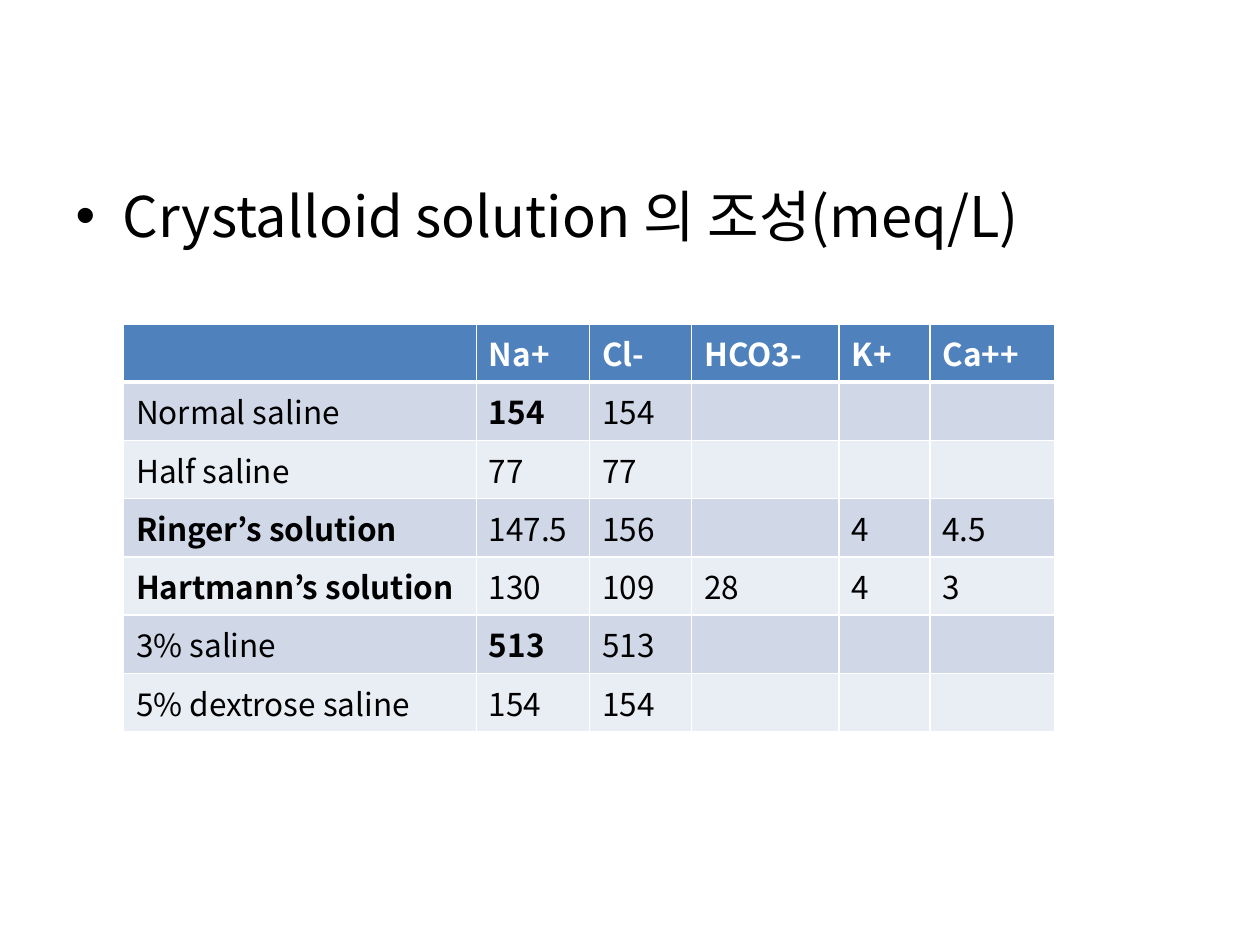
from lxml.etree import SubElement
from pptx import Presentation
from pptx.dml.color import RGBColor
from pptx.oxml.ns import qn
from pptx.util import Inches, Pt

FONT = "Noto Sans CJK KR"
HEADER_FILL, BAND_FILLS = "4F81BD", ("E9EDF4", "D0D8E8")
COLUMN_WIDTHS = [2.8, 0.9, 0.81, 1.17, 0.72, 0.99]
ROW_HEIGHT = 0.46
ROWS = [
    ["", "Na+", "Cl-", "HCO3-", "K+", "Ca++"],
    ["Normal saline", "154", "154", "", "", ""],
    ["Half saline", "77", "77", "", "", ""],
    ["Ringer’s solution", "147.5", "156", "", "4", "4.5"],
    ["Hartmann’s solution", "130", "109", "28", "4", "3"],
    ["3% saline", "513", "513", "", "", ""],
    ["5% dextrose saline", "154", "154", "", "", ""],
]
BOLD_CELLS = {(1, 1), (3, 0), (4, 0), (5, 1)}


def rgb(color):
    return RGBColor.from_string(color)


def write_text(paragraph, text, color, **formats):
    run = paragraph.add_run()
    run.text = text
    for name, value in {"name": FONT, **formats}.items():
        setattr(run.font, name, value)
    run.font.color.rgb = rgb(color)
    SubElement(run.font._element, qn("a:ea"), typeface=FONT)


presentation = Presentation()
presentation.slide_width, presentation.slide_height = Inches(10), Inches(7.5)
slide = presentation.slides.add_slide(presentation.slide_layouts[1])
title = slide.shapes.title
title._element.getparent().remove(title._element)

body = slide.placeholders[1]
for name, value in {"left": 0.5, "top": 1.39, "width": 9, "height": 5.31}.items():
    setattr(body, name, Inches(value))
write_text(body.text_frame.paragraphs[0], "Crystalloid solution 의 조성(meq/L)", "000000", size=Pt(32))

table = slide.shapes.add_table(
    len(ROWS), len(COLUMN_WIDTHS), Inches(0.98), Inches(2.57),
    Inches(sum(COLUMN_WIDTHS)), Inches(ROW_HEIGHT * len(ROWS)),
).table
for column, width in zip(table.columns, COLUMN_WIDTHS):
    column.width = Inches(width)

for row_index, values in enumerate(ROWS):
    is_header = row_index == 0
    table.rows[row_index].height = Inches(ROW_HEIGHT)
    border_widths = {"lnL": 1, "lnR": 1, "lnT": 3 if row_index == 1 else 1, "lnB": 3 if is_header else 1}
    for column_index, value in enumerate(values):
        cell = table.cell(row_index, column_index)
        properties = cell._tc.get_or_add_tcPr()
        for side, width in border_widths.items():
            line = SubElement(properties, qn(f"a:{side}"), w=str(Pt(width)))
            SubElement(SubElement(line, qn("a:solidFill")), qn("a:srgbClr"), val="FFFFFF")
        cell.fill.solid()
        cell.fill.fore_color.rgb = rgb(HEADER_FILL if is_header else BAND_FILLS[row_index % 2])
        if value:
            write_text(
                cell.text_frame.paragraphs[0], value, "FFFFFF" if is_header else "000000",
                size=Pt(18), bold=is_header or (row_index, column_index) in BOLD_CELLS,
            )

presentation.save("out.pptx")
